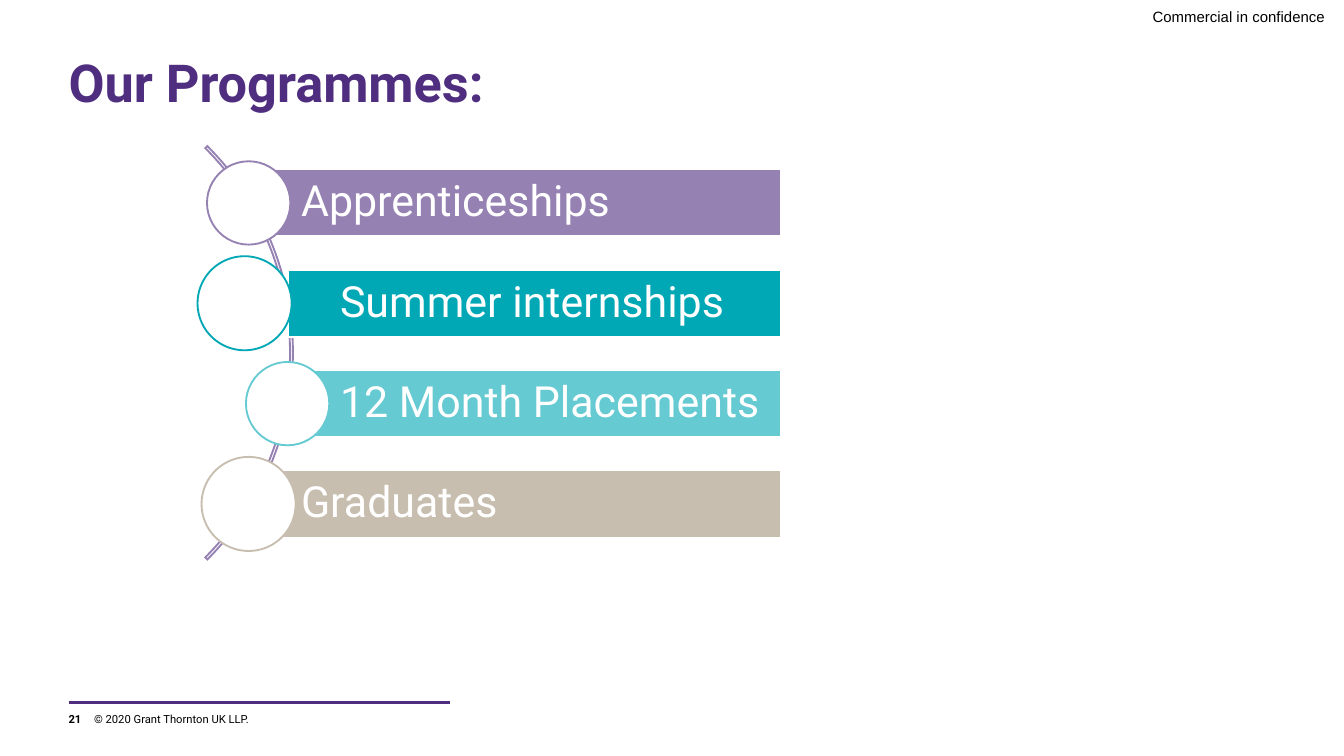
from pptx import Presentation
from pptx.dml.color import RGBColor
from pptx.enum.shapes import MSO_CONNECTOR, MSO_SHAPE
from pptx.enum.text import MSO_ANCHOR, PP_ALIGN
from pptx.oxml.ns import qn
from pptx.util import Inches, Pt
from lxml import etree

PURPLE = RGBColor(0x4F, 0x2D, 0x7F)
LILAC = RGBColor(0x95, 0x81, 0xB2)
TEAL = RGBColor(0x00, 0xA7, 0xB5)
AQUA = RGBColor(0x66, 0xCA, 0xD3)
SAND = RGBColor(0xC8, 0xBE, 0xAF)
WHITE = RGBColor(0xFF, 0xFF, 0xFF)
BLACK = RGBColor(0x00, 0x00, 0x00)

TITLE = "Our Programmes:"
CONFIDENTIALITY = "Commercial in confidence"
COPYRIGHT = "© 2020 Grant Thornton UK LLP."
PAGE_NUMBER = "21"

PROGRAMMES = [
    {"name": "Apprenticeships", "color": LILAC, "bar_left": 1.85, "center_x": 1.85, "diameter": 0.62},
    {"name": "Summer internships", "color": TEAL, "bar_left": 2.14, "center_x": 1.82, "diameter": 0.7},
    {"name": "12 Month Placements", "color": AQUA, "bar_left": 2.14, "center_x": 2.14, "diameter": 0.62},
    {"name": "Graduates", "color": SAND, "bar_left": 1.85, "center_x": 1.85, "diameter": 0.7},
]
FIRST_BAR_TOP, LAST_BAR_TOP = 1.26, 3.5
BAR_RIGHT, BAR_HEIGHT = 5.81, 0.5


def write(shape, text, size, color, font="Roboto", bold=False, insets=(0, 0, 0, 0),
          anchor=MSO_ANCHOR.TOP, align=PP_ALIGN.LEFT, line_spacing=1.0):
    frame = shape.text_frame
    frame.word_wrap = True
    frame.vertical_anchor = anchor
    frame.margin_left, frame.margin_top, frame.margin_right, frame.margin_bottom = map(Inches, insets)
    frame.text = text
    paragraph = frame.paragraphs[0]
    paragraph.alignment = align
    paragraph.line_spacing = line_spacing
    run_font = paragraph.runs[0].font
    run_font.name, run_font.size, run_font.bold = font, Pt(size), bold
    run_font.color.rgb = color


def add_text(slide, box, *content, **style):
    write(slide.shapes.add_textbox(*map(Inches, box)), *content, **style)


def add_shape(slide, kind, box, fill, line):
    shape = slide.shapes.add_shape(kind, *map(Inches, box))
    shape.shadow.inherit = False
    if fill is None:
        shape.fill.background()
    else:
        shape.fill.solid()
        shape.fill.fore_color.rgb = fill
    shape.line.color.rgb = line
    shape.line.width = Pt(1)
    etree.SubElement(shape._element.spPr.find(qn("a:ln")), qn("a:miter"), lim="800000")
    return shape


def add_programme(slide, index, name, color, bar_left, center_x, diameter):
    pitch = (LAST_BAR_TOP - FIRST_BAR_TOP) / (len(PROGRAMMES) - 1)
    top = FIRST_BAR_TOP + index * pitch
    bar = add_shape(slide, MSO_SHAPE.RECTANGLE,
                    (bar_left, top, BAR_RIGHT - bar_left, BAR_HEIGHT), color, WHITE)
    write(bar, name, 23, WHITE, insets=(0.39, 0.06, 0.06, 0.06),
          anchor=MSO_ANCHOR.MIDDLE, line_spacing=0.9)
    center_y = top + BAR_HEIGHT / 2
    add_shape(slide, MSO_SHAPE.OVAL,
              (center_x - diameter / 2, center_y - diameter / 2, diameter, diameter), WHITE, color)


def main():
    presentation = Presentation()
    presentation.slide_width = Inches(10)
    presentation.slide_height = Inches(10 * 9 / 16)
    slide = presentation.slides.add_slide(presentation.slide_layouts[6])

    add_text(slide, (0.7, 5.3, 4.31, 0.1), COPYRIGHT, 6, BLACK)
    add_text(slide, (0.51, 5.3, 0.18, 0.1), PAGE_NUMBER, 6, BLACK, bold=True)
    add_text(slide, (8.44, 0, 1.56, 0.24), CONFIDENTIALITY, 8, BLACK, font="Arial",
             insets=(0, 0, 0.14, 0), anchor=MSO_ANCHOR.MIDDLE, align=PP_ALIGN.RIGHT)
    add_text(slide, (0.51, 0.43, 8.98, 0.87), TITLE, 28, PURPLE, bold=True, line_spacing=0.9)

    footer_rule = slide.shapes.add_connector(
        MSO_CONNECTOR.STRAIGHT, Inches(0.51), Inches(5.23), Inches(3.35), Inches(5.23))
    footer_rule.line.color.rgb = PURPLE
    footer_rule.line.width = Pt(1.5)
    etree.SubElement(footer_rule._element.spPr, qn("a:effectLst"))

    arc = add_shape(slide, MSO_SHAPE.BLOCK_ARC, (-2.17, 0.45, 4.35, 4.35), None, LILAC)
    for position, value in enumerate((189, 27, 0.005)):
        arc.adjustments[position] = value

    for index, programme in enumerate(PROGRAMMES):
        add_programme(slide, index, **programme)

    presentation.save("out.pptx")


if __name__ == "__main__":
    main()
